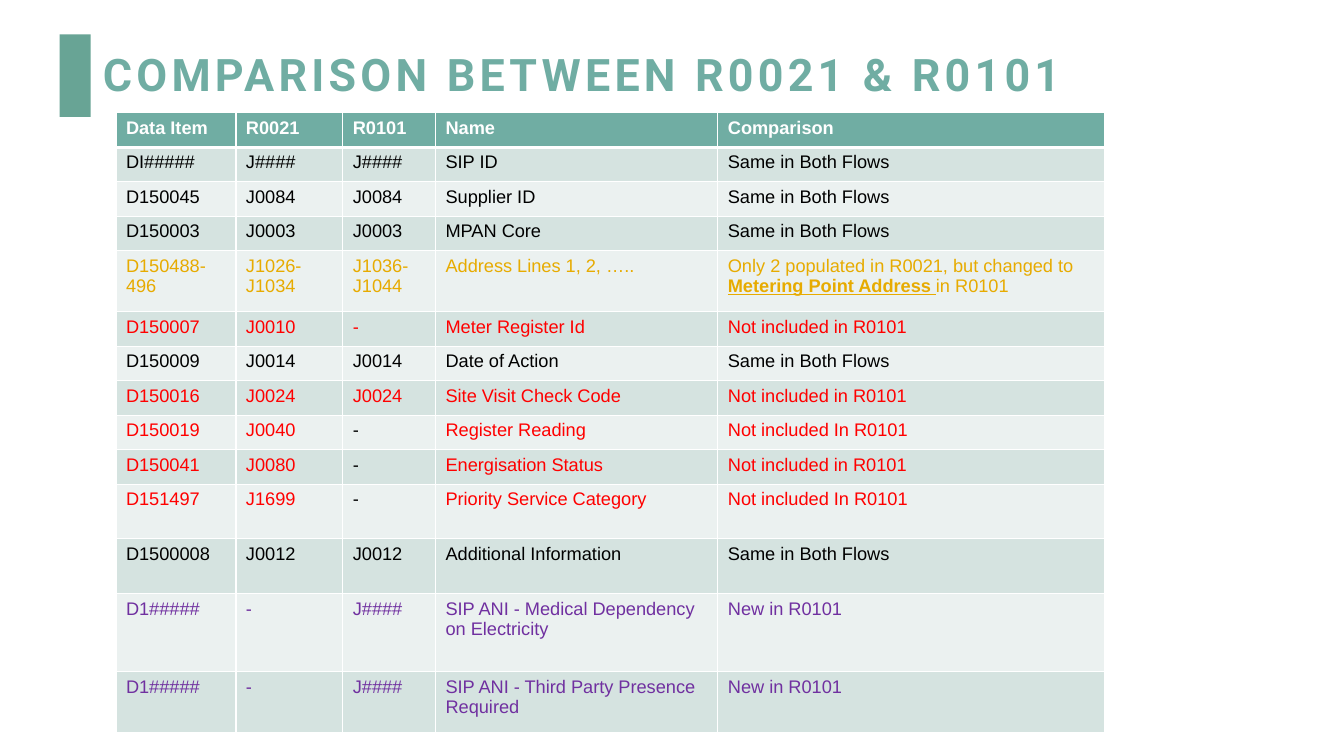
from dataclasses import dataclass

from lxml.etree import SubElement
from pptx import Presentation
from pptx.dml.color import RGBColor
from pptx.enum.shapes import MSO_SHAPE
from pptx.enum.text import MSO_ANCHOR, PP_ALIGN
from pptx.oxml.ns import qn
from pptx.util import Inches, Pt


@dataclass(frozen=True)
class Theme:
    accent: str = "70ADA3"
    marker: str = "68A495"
    bands: tuple = ("D5E3E0", "EBF1F0")
    white: str = "FFFFFF"
    same: str = "000000"
    changed: str = "E7AB00"
    removed: str = "FF0000"
    new: str = "7030A0"
    title_font: str = "Roboto"
    body_font: str = "Arial"
    title_size: int = 32
    body_size: int = 13


THEME = Theme()

# Table grid in inches
TABLE_LEFT, TABLE_TOP, TABLE_HEIGHT = 1.15, 1.12, 6.15
COLUMNS = [1.19, 1.06, 0.92, 2.8, 3.84]
LINE_ROW, WRAPPED_ROW, LOOSE_ROW, TALL_ROW = 0.34, 0.6, 0.54, 0.77

HEADINGS = ["Data Item", "R0021", "R0101", "Name", "Comparison"]
SAME = "Same in Both Flows"
ADDRESS_CHANGE = [
    ("Only 2 populated in R0021, but changed to ", {}),
    ("Metering Point Address ", {"bold": True, "underline": True}),
    ("in R0101", {}),
]

# Row height, text colour, cell values
ITEMS = [
    (LINE_ROW, THEME.same, ["DI#####", "J####", "J####", "SIP ID", SAME]),
    (LINE_ROW, THEME.same, ["D150045", "J0084", "J0084", "Supplier ID", SAME]),
    (LINE_ROW, THEME.same, ["D150003", "J0003", "J0003", "MPAN Core", SAME]),
    (WRAPPED_ROW, THEME.changed, ["D150488-496", "J1026-J1034", "J1036-J1044",
                                  "Address Lines 1, 2, …..", ADDRESS_CHANGE]),
    (LINE_ROW, THEME.removed, ["D150007", "J0010", "-", "Meter Register Id",
                               "Not included in R0101"]),
    (LINE_ROW, THEME.same, ["D150009", "J0014", "J0014", "Date of Action", SAME]),
    (LINE_ROW, THEME.removed, ["D150016", "J0024", "J0024", "Site Visit Check Code",
                               "Not included in R0101"]),
    (LINE_ROW, THEME.removed, ["D150019", "J0040", [("-", {"color": THEME.same})],
                               "Register Reading", "Not included In R0101"]),
    (LINE_ROW, THEME.removed, ["D150041", "J0080", [("-", {"color": THEME.same})],
                               "Energisation Status", "Not included in R0101"]),
    (LOOSE_ROW, THEME.removed, ["D151497", "J1699", [("-", {"color": THEME.same})],
                                "Priority Service Category", "Not included In R0101"]),
    (LOOSE_ROW, THEME.same, ["D1500008", "J0012", "J0012", "Additional Information", SAME]),
    (TALL_ROW, THEME.new, ["D1#####", "-", "J####",
                           "SIP ANI - Medical Dependency on Electricity", "New in R0101"]),
    (WRAPPED_ROW, THEME.new, ["D1#####", "-", "J####",
                              "SIP ANI - Third Party Presence Required", "New in R0101"]),
]


def add_text(paragraph, text, *, color, size=THEME.body_size, font=THEME.body_font,
             bold=False, underline=False, spacing=0):
    run = paragraph.add_run()
    run.text = text
    run.font.name = font
    run.font.size = Pt(size)
    run.font.bold = bold
    run.font.underline = underline
    run.font.color.rgb = RGBColor.from_string(color)
    if spacing:
        run.font._element.set("spc", str(spacing * 100))


def add_marker(slide):
    shape = slide.shapes.add_shape(MSO_SHAPE.RECTANGLE, Inches(0.59), Inches(0.34),
                                   Inches(0.31), Inches(0.82))
    shape.shadow.inherit = False
    shape.fill.solid()
    shape.fill.fore_color.rgb = RGBColor.from_string(THEME.marker)
    shape.line.fill.background()


def set_title(slide, text):
    title = slide.shapes.title
    title.left, title.top = Inches(0.92), Inches(0.4)
    title.width, title.height = Inches(10.15), Inches(0.72)
    title.text_frame.vertical_anchor = MSO_ANCHOR.MIDDLE
    paragraph = title.text_frame.paragraphs[0]
    paragraph.alignment = PP_ALIGN.LEFT
    paragraph.line_spacing = 0.9
    add_text(paragraph, text, color=THEME.accent, size=THEME.title_size,
             font=THEME.title_font, bold=True, spacing=3)


def set_borders(cell, bottom):
    properties = cell._tc.get_or_add_tcPr()
    widths = {"a:lnL": 1, "a:lnR": 1, "a:lnT": 1, "a:lnB": bottom}
    for position, (tag, width) in enumerate(widths.items()):
        line = properties.makeelement(qn(tag), {"w": str(Pt(width))})
        fill = SubElement(line, qn("a:solidFill"))
        SubElement(fill, qn("a:srgbClr"), val=THEME.white)
        properties.insert(position, line)


def fill_cell(cell, content, fill, bottom=1, **text_format):
    cell.fill.solid()
    cell.fill.fore_color.rgb = RGBColor.from_string(fill)
    set_borders(cell, bottom)
    pieces = [(content, {})] if isinstance(content, str) else content
    for text, changes in pieces:
        add_text(cell.text_frame.paragraphs[0], text, **{**text_format, **changes})


def add_comparison_table(slide):
    frame = slide.shapes.add_table(len(ITEMS) + 1, len(COLUMNS), Inches(TABLE_LEFT),
                                   Inches(TABLE_TOP), Inches(sum(COLUMNS)),
                                   Inches(TABLE_HEIGHT))
    table = frame.table
    for column, width in zip(table.columns, COLUMNS):
        column.width = Inches(width)

    # Row heights share the table height
    heights = [LINE_ROW] + [height for height, _, _ in ITEMS]
    for row, height in zip(table.rows, heights):
        row.height = Inches(TABLE_HEIGHT * height / sum(heights))

    # Heading row
    for cell, heading in zip(table.rows[0].cells, HEADINGS):
        fill_cell(cell, heading, THEME.accent, bottom=3, color=THEME.white, bold=True)

    # Banded data rows
    for index, (_, color, values) in enumerate(ITEMS):
        for cell, value in zip(table.rows[index + 1].cells, values):
            fill_cell(cell, value, THEME.bands[index % 2], color=color)


def main():
    presentation = Presentation()
    presentation.slide_width, presentation.slide_height = Inches(13.33), Inches(7.5)
    slide = presentation.slides.add_slide(presentation.slide_layouts[5])
    add_marker(slide)
    set_title(slide, "COMPARISON BETWEEN R0021 & R0101")
    add_comparison_table(slide)
    presentation.save("out.pptx")


if __name__ == "__main__":
    main()
